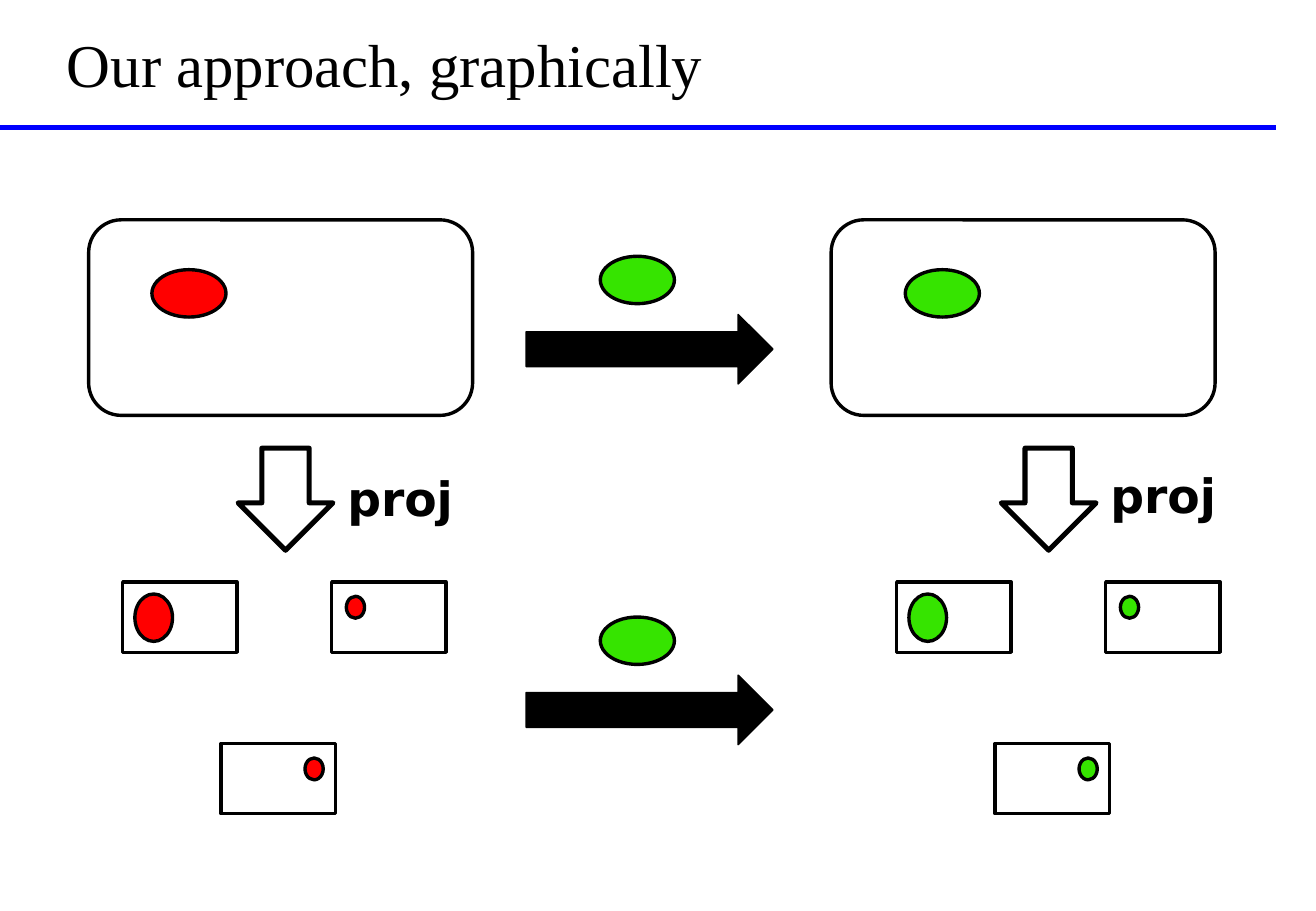
from lxml.etree import SubElement
from pptx import Presentation
from pptx.dml.color import RGBColor
from pptx.enum.shapes import MSO_CONNECTOR, MSO_SHAPE
from pptx.enum.text import MSO_ANCHOR, MSO_AUTO_SIZE, PP_ALIGN
from pptx.oxml.ns import qn
from pptx.util import Emu, Pt

PX = 9144
COLORS = {"ink": "000000", "rule": "0000FF", "old": "FF0000", "new": "36E400"}
TITLE_FONT = {"name": "Times New Roman", "size": Pt(36), "bold": False}
LABEL_FONT = {"name": "DejaVu Sans", "size": Pt(28), "bold": True}
TITLE_FRAME = {"vertical_anchor": MSO_ANCHOR.BOTTOM, "word_wrap": True,
               "auto_size": MSO_AUTO_SIZE.NONE}
LABEL_FRAME = {"vertical_anchor": MSO_ANCHOR.TOP, "word_wrap": False,
               "auto_size": MSO_AUTO_SIZE.SHAPE_TO_FIT_TEXT}
TITLE_PARAGRAPH = {"alignment": PP_ALIGN.LEFT}
LABEL_PARAGRAPH = {"alignment": PP_ALIGN.LEFT, "line_spacing": 1.2,
                   "space_before": Pt(5.6)}


def px(*lengths):
    return [Emu(length * PX) for length in lengths]


def color(key):
    return RGBColor.from_string(COLORS[key])


def apply(target, values):
    for name, value in values.items():
        setattr(target, name, value)


def write(holder, text, frame_format, paragraph_format, font_format):
    frame = holder.text_frame
    frame.text = text
    paragraph = frame.paragraphs[0]
    font = paragraph.runs[0].font
    apply(frame, frame_format)
    apply(paragraph, paragraph_format)
    apply(font, font_format)
    font.color.rgb = color("ink")


def draw(slide, kind, box, fill=None, weight=2):
    figure = slide.shapes.add_shape(kind, *px(*box))
    figure.shadow.inherit = False
    if fill:
        figure.fill.solid()
        figure.fill.fore_color.rgb = color(fill)
    else:
        figure.fill.background()
    figure.line.color.rgb = color("ink")
    figure.line.width = Pt(weight)


def add_heading(slide, box, text):
    left, top, width, height = box
    rule = slide.shapes.add_connector(
        MSO_CONNECTOR.STRAIGHT, *px(left, top + height, left + width, top + height))
    rule.line.color.rgb = color("rule")
    rule.line.width = Pt(3)
    SubElement(rule._element.spPr, qn("a:effectLst"))
    title = slide.shapes.title
    placement = px(left + 45, top + 18, 984, 69)
    apply(title, dict(zip(("left", "top", "width", "height"), placement)))
    write(title, text, TITLE_FRAME, TITLE_PARAGRAPH, TITLE_FONT)


def add_state(slide, box, element_offset, fill):
    left, top, width, height = box
    draw(slide, MSO_SHAPE.ROUNDED_RECTANGLE, box)
    draw(slide, MSO_SHAPE.OVAL, (left + element_offset, top + 41, 61, 39), fill)


def add_projection(slide, box, label_offset):
    left, top, width, height = box
    draw(slide, MSO_SHAPE.DOWN_ARROW, (left, top, 78, height), weight=3)
    label = slide.shapes.add_textbox(*px(left + 80, top + label_offset, 110, 61))
    write(label, "proj", LABEL_FRAME, LABEL_PARAGRAPH, LABEL_FONT)


def add_views(slide, box, fill):
    left, top, width, height = box
    view_width, view_height = 94, 58
    right, bottom = width - view_width, height - view_height
    views = [((0, 0), (10, 10, 31, 39)),
             ((right, 0), (12, 12, 15, 18)),
             ((right // 2 - 5, bottom), (69, 12, 15, 18))]
    for (x, y), (dx, dy, dot_width, dot_height) in views:
        x, y = left + x, top + y
        draw(slide, MSO_SHAPE.RECTANGLE, (x, y, view_width, view_height))
        draw(slide, MSO_SHAPE.OVAL, (x + dx, y + dy, dot_width, dot_height), fill)


def add_update(slide, box):
    left, top, width, height = box
    draw(slide, MSO_SHAPE.OVAL, (left + 61, top, 61, 39), "new")
    draw(slide, MSO_SHAPE.RIGHT_ARROW, (left, top + 48, width, height - 48), "ink", 1)


def main():
    deck = Presentation()
    deck.slide_width, deck.slide_height = px(1083, 750)
    slide = deck.slides.add_slide(deck.slide_layouts[5])
    add_heading(slide, (0, 0, 1050, 105), "Our approach, graphically")
    sides = [(73, 52, 196, 3, 101, "old"), (684, 61, 824, 1, 738, "new")]
    for state, element, arrow, label, views, fill in sides:
        add_state(slide, (state, 181, 316, 161), element, fill)
        add_projection(slide, (arrow, 369, 190, 84), label)
        add_views(slide, (views, 479, 266, 191), fill)
    for top in (211, 508):
        add_update(slide, (433, top, 203, 105))
    deck.save("out.pptx")


if __name__ == "__main__":
    main()
